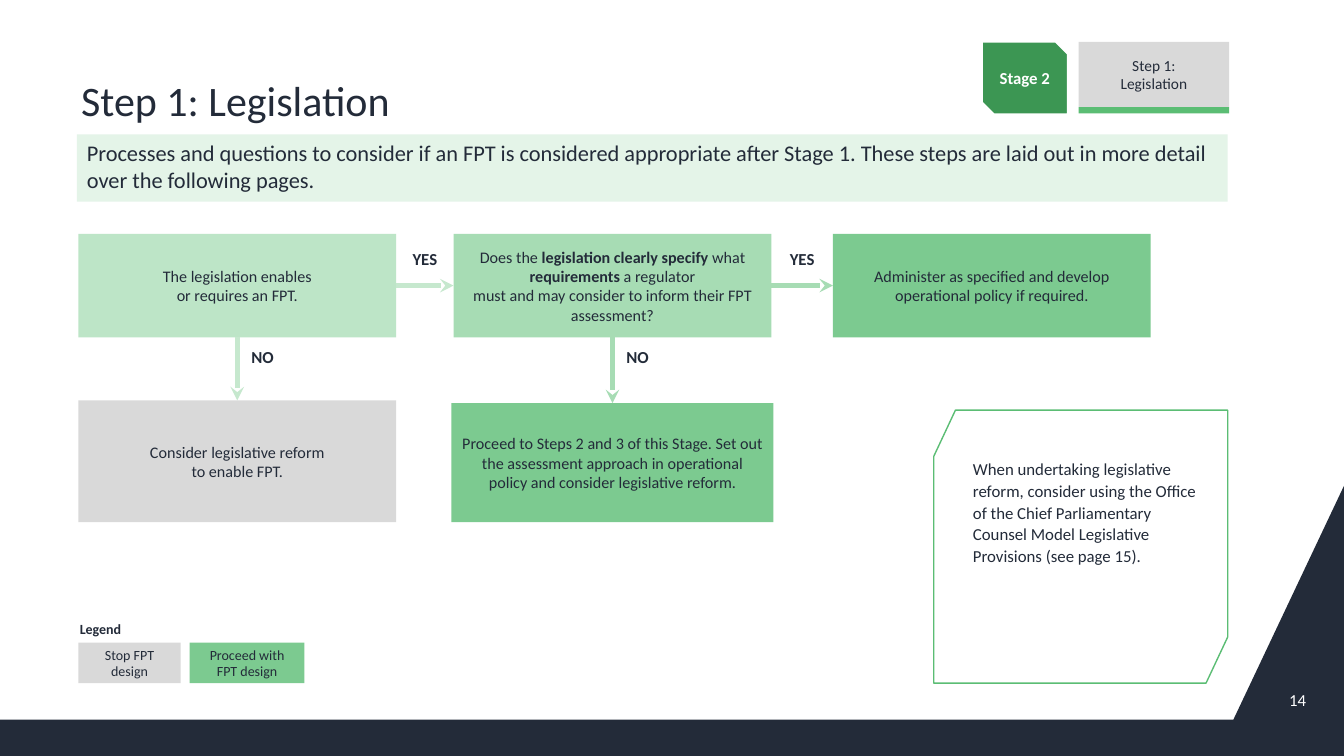
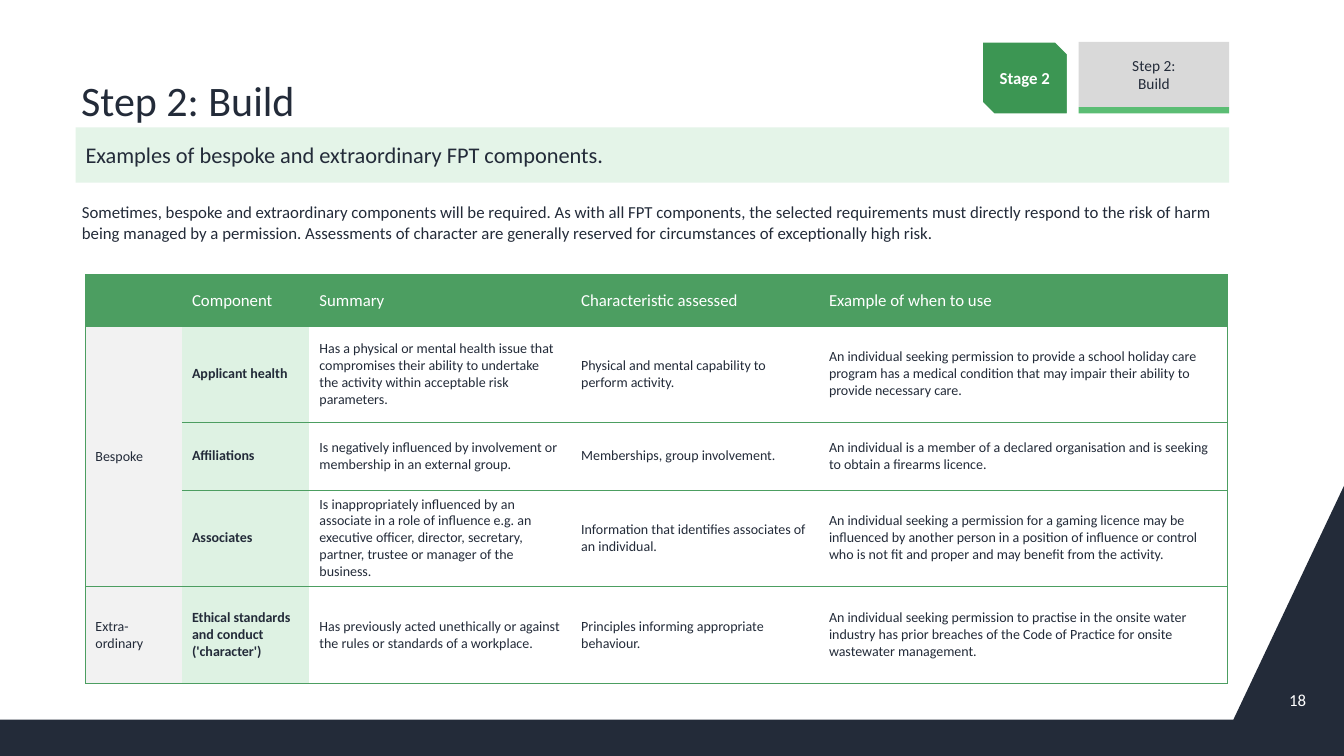
from lxml.etree import SubElement
from pptx import Presentation
from pptx.dml.color import RGBColor
from pptx.enum.shapes import MSO_CONNECTOR as CONN, MSO_SHAPE as SHAPE
from pptx.enum.text import MSO_ANCHOR as ANCHOR, PP_ALIGN as ALIGN
from pptx.oxml import parse_xml
from pptx.oxml.ns import nsdecls, qn
from pptx.util import Pt

FONT = "Calibri"
NAVY = RGBColor(0x23, 0x2B, 0x39)
WHITE = RGBColor(0xFF, 0xFF, 0xFF)
GREY = RGBColor(0xD9, 0xD9, 0xD9)
LIGHT_GREY = RGBColor(0xF2, 0xF2, 0xF2)
STAGE_GREEN = RGBColor(0x3C, 0x96, 0x53)
TABLE_GREEN = RGBColor(0x4C, 0x9E, 0x61)
ACCENT = RGBColor(0x5B, 0xBD, 0x74)
PROCEED = RGBColor(0x7C, 0xCA, 0x90)
QUESTION = RGBColor(0xA7, 0xDC, 0xB4)
START = RGBColor(0xBD, 0xE5, 0xC7)
START_ARROW = RGBColor(0xC6, 0xE8, 0xCE)
BAND = RGBColor(0xE4, 0xF4, 0xE8)
COMPONENT = RGBColor(0xDE, 0xF2, 0xE3)

NO_STYLE = "{2D5ABB26-0587-4C30-8999-92F81FD0307C}"
TITLE_BOX = (55, 12, 823, 81)
COL_WIDTHS = (69, 91, 187, 177, 292)
ROW_HEIGHTS = (37, 68.5, 48.5, 69, 69)
ROWS = [
    ("", "Component", "Summary", "Characteristic assessed", "Example of when to use"),
    ("Bespoke", "Applicant health",
     "Has a physical or mental health issue that compromises their ability to undertake "
     "the activity within acceptable risk parameters.",
     "Physical and mental capability to perform activity.",
     "An individual seeking permission to provide a school holiday care program has a "
     "medical condition that may impair their ability to provide necessary care."),
    ("", "Affiliations",
     "Is negatively influenced by involvement or membership in an external group.",
     "Memberships, group involvement.",
     "An individual is a member of a declared organisation and is seeking to obtain a "
     "firearms licence."),
    ("", "Associates",
     "Is inappropriately influenced by an associate in a role of influence e.g. an "
     "executive officer, director, secretary, partner, trustee or manager of the business.",
     "Information that identifies associates of an individual.",
     "An individual seeking a permission for a gaming licence may be influenced by another "
     "person in a position of influence or control who is not fit and proper and may "
     "benefit from the activity."),
    ("Extra-ordinary", "Ethical standards and conduct ('character')",
     "Has previously acted unethically or against the rules or standards of a workplace.",
     "Principles informing appropriate behaviour.",
     "An individual seeking permission to practise in the onsite water industry has prior "
     "breaches of the Code of Practice for onsite wastewater management."),
]


def points(values):
    return [Pt(v) for v in values]


def style(p, size, color=NAVY, bold=False, align=ALIGN.LEFT):
    p.alignment = align
    for r in p.runs:
        f = r.font
        f.name, f.size, f.bold = FONT, Pt(size), bold
        f.color.rgb = color
    for br in p._p.findall(qn("a:br")):
        SubElement(br, qn("a:rPr")).set("sz", str(int(size * 100)))


def set_insets(tf, left, top, right, bottom):
    tf.margin_left, tf.margin_top, tf.margin_right, tf.margin_bottom = points(
        (left, top, right, bottom))


def paint(sp, fill=None, line=None, width=1):
    sp.shadow.inherit = False
    for part, color in ((sp.fill, fill), (sp.line.fill, line)):
        if color is None:
            part.background()
        else:
            part.solid()
            part.fore_color.rgb = color
    if line is not None:
        sp.line.width = Pt(width)


def add_box(shapes, box, fill, text="", size=11.5, kind=SHAPE.RECTANGLE, line=None,
            width=1, **font):
    sp = shapes.add_shape(kind, *points(box))
    paint(sp, fill, line, width)
    tf = sp.text_frame
    tf.word_wrap = True
    tf.vertical_anchor = ANCHOR.MIDDLE
    tf.text = text
    style(tf.paragraphs[0], size, **{"align": ALIGN.CENTER, **font})
    return sp


def add_text(slide, box, text, size, **font):
    tf = slide.shapes.add_textbox(*points(box)).text_frame
    tf.word_wrap = True
    tf.vertical_anchor = ANCHOR.MIDDLE
    set_insets(tf, 0, 0, 0, 0)
    tf.text = text
    style(tf.paragraphs[0], size, **font)


def add_outline(slide, corners, **colors):
    builder = slide.shapes.build_freeform(*points(corners[0]))
    builder.add_line_segments([points(c) for c in corners[1:]], close=True)
    sp = builder.convert_to_shape()
    paint(sp, **colors)
    return sp


def add_arrow(slide, start, start_side, end, end_side, color):
    cn = slide.shapes.add_connector(CONN.STRAIGHT, 0, 0, 0, 0)
    cn.begin_connect(start, start_side)
    cn.end_connect(end, end_side)
    cn.line.color.rgb = color
    cn.line.width = Pt(3.25)
    SubElement(cn.line._get_or_add_ln(), qn("a:tailEnd")).set("type", "stealth")
    SubElement(cn._element.spPr, qn("a:effectLst"))


def place_placeholder(ph, box, text, size, spacing, anchor):
    ph.left, ph.top, ph.width, ph.height = points(box)
    tf = ph.text_frame
    tf.vertical_anchor = anchor
    set_insets(tf, 3, 3.6, 3, 3.6)
    tf.text = text
    p = tf.paragraphs[0]
    p.line_spacing = spacing
    style(p, size)
    return p


def add_step_tag(slide, x, y, text):
    add_box(slide.shapes, (x, y, 62, 52.5), STAGE_GREEN, "Stage 2", 12,
            SHAPE.SNIP_2_DIAG_RECTANGLE, line=WHITE, width=2, color=WHITE, bold=True)
    tag = slide.shapes.add_group_shape().shapes
    add_box(tag, (x + 69.5, y + 0.5, 107.5, 46.5), GREY, text, 11)
    add_box(tag, (x + 69.5, y + 47, 107.5, 4.5), ACCENT)


def add_intro_band(slide, box, text, anchor=ANCHOR.MIDDLE):
    tf = add_box(slide.shapes, box, BAND, text, 16, align=ALIGN.LEFT).text_frame
    tf.vertical_anchor = anchor
    p = tf.paragraphs[0]
    p.space_before = p.space_after = Pt(2)


def start_slide(prs, layout, number, step, name):
    """Add a slide with the footer, title, step tag and page number."""
    slide = prs.slides.add_slide(prs.slide_layouts[layout])
    add_outline(slide, [(881, 514), (0, 514), (0, 540), (960, 540), (960, 347)], fill=NAVY)
    place_placeholder(slide.shapes.title, TITLE_BOX, f"{step}: {name}", 30, 0.9,
                      ANCHOR.BOTTOM)
    add_step_tag(slide, 701, 29.5, f"{step}:\v{name}")
    add_text(slide, (898, 485, 35, 29), number, 12, color=WHITE, align=ALIGN.RIGHT)
    return slide


def add_flowchart(slide, x, y):
    w, h = 227, 74
    shapes = slide.shapes
    enables = add_box(shapes, (x, y, w, h), START,
                      "The legislation enables\vor requires an FPT.")
    question = add_box(shapes, (x + 268, y, w, h), QUESTION)
    p = question.text_frame.paragraphs[0]
    emphasised = ("legislation clearly specify", "requirements")
    for text in ("Does the ", emphasised[0], " what ", emphasised[1], " a regulator"):
        p.add_run().text = text
    p.add_line_break()
    p.add_run().text = "must and may consider to inform their FPT assessment?"
    style(p, 11.5, align=ALIGN.CENTER)
    for r in p.runs:
        r.font.bold = r.text in emphasised
    administer = add_box(shapes, (x + 539, y, w, h), PROCEED,
                         "Administer as specified and develop operational policy if required.")
    reform = add_box(shapes, (x, y + 119, w, 87), GREY,
                     "Consider legislative reform\vto enable FPT.")
    proceed = add_box(shapes, (x + 266.5, y + 121, 230, 85), PROCEED,
                      "Proceed to Steps 2 and 3 of this Stage. Set out the assessment "
                      "approach in operational policy and consider legislative reform.")

    for left, right, below, color in ((enables, question, reform, START_ARROW),
                                      (question, administer, proceed, QUESTION)):
        add_arrow(slide, left, 3, right, 1, color)
        add_arrow(slide, left, 2, below, 0, color)
        edge = left.left.pt + w
        add_text(slide, (edge, y + 7, right.left.pt - edge, 22), "YES", 12, bold=True,
                 align=ALIGN.CENTER)
        add_text(slide, (edge - w / 2 + 1, y + 77, 34, 22), "NO", 12, bold=True,
                 align=ALIGN.CENTER)


def add_legend(slide, x, y):
    add_text(slide, (x + 1, y, 58, 29), "Legend", 10, bold=True)
    add_box(slide.shapes, (x, y + 24, 73, 29), GREY, "Stop FPT design", 10)
    add_box(slide.shapes, (x + 79.5, y + 24, 82, 29), PROCEED, "Proceed with FPT design", 10)


def add_note(slide, x, y, w, h):
    cut_w, cut_h = 15.5, 33
    sp = add_outline(slide, [(x + w, y), (x + cut_w, y), (x, y + cut_h), (x, y + h),
                             (x + w - cut_w, y + h), (x + w, y + h - cut_h)], line=ACCENT)
    tf = sp.text_frame
    tf.word_wrap = True
    tf.vertical_anchor = ANCHOR.TOP
    set_insets(tf, 28, 34, 22, 3.6)
    tf.text = ("When undertaking legislative reform, consider using the Office of the Chief "
               "Parliamentary Counsel Model Legislative Provisions (see page 15).")
    p = tf.paragraphs[0]
    p.line_spacing = 1.07
    p.space_after = Pt(6)
    style(p, 12)


def add_borders(cell, sides):
    """Draw the given sides, in the order L, R, T, B."""
    for i, side in enumerate(sides):
        cell._tc.get_or_add_tcPr().insert(i, parse_xml(
            f'<a:ln{side} {nsdecls("a")} w="6350"><a:solidFill>'
            f'<a:srgbClr val="{TABLE_GREEN}"/></a:solidFill></a:ln{side}>'))


def add_components_table(slide, x, y):
    frame = slide.shapes.add_table(len(ROWS), len(COL_WIDTHS),
                                   *points((x, y, sum(COL_WIDTHS), sum(ROW_HEIGHTS))))
    table = frame.table
    table._tbl.tblPr.find(qn("a:tableStyleId")).text = NO_STYLE
    for col, width in zip(table.columns, COL_WIDTHS):
        col.width = Pt(width)
    for row, height in zip(table.rows, ROW_HEIGHTS):
        row.height = Pt(height)
    table.cell(1, 0).merge(table.cell(3, 0))

    last = len(COL_WIDTHS) - 1
    for i, texts in enumerate(ROWS):
        for j, text in enumerate(texts):
            cell = table.cell(i, j)
            if cell.is_spanned:
                continue
            fill = TABLE_GREEN if i == 0 else {0: LIGHT_GREY, 1: COMPONENT}.get(j)
            if fill is None:
                cell.fill.background()
            else:
                cell.fill.solid()
                cell.fill.fore_color.rgb = fill
            cell.vertical_anchor = ANCHOR.MIDDLE
            cell.text = text
            style(cell.text_frame.paragraphs[0], 10 if i else 12,
                  NAVY if i else WHITE, bold=i > 0 and j == 1)
            add_borders(cell, {0: "L", last: "R"}.get(j, "") + "TB")


def build_legislation(prs):
    slide = start_slide(prs, 5, "14", "Step 1", "Legislation")
    add_intro_band(slide, (55, 96, 822, 48),
                   "Processes and questions to consider if an FPT is considered appropriate "
                   "after Stage 1. These steps are laid out in more detail over the following "
                   "pages.", ANCHOR.TOP)
    add_flowchart(slide, 56, 167)
    add_legend(slide, 56, 435)
    add_note(slide, 667, 293, 210, 195)


def build_components(prs):
    slide = start_slide(prs, 1, "18", "Step 2", "Build")
    add_intro_band(slide, (54, 91, 824, 39.5),
                   "Examples of bespoke and extraordinary FPT components.")
    p = place_placeholder(
        slide.placeholders[1], (55.5, 139.5, 821.5, 51),
        "Sometimes, bespoke and extraordinary components will be required. As with all FPT "
        "components, the selected requirements must directly respond to the risk of harm being "
        "managed by a permission. Assessments of character are generally reserved for "
        "circumstances of exceptionally high risk.", 12, 1.05, ANCHOR.TOP)
    p.space_before = Pt(6)
    pPr = p._p.get_or_add_pPr()
    pPr.set("marL", "0")
    pPr.set("indent", "0")
    SubElement(pPr, qn("a:buNone"))
    add_components_table(slide, 61, 196)


def main():
    prs = Presentation()
    prs.slide_width, prs.slide_height = Pt(960), Pt(540)
    build_legislation(prs)
    build_components(prs)
    prs.save("out.pptx")


if __name__ == "__main__":
    main()
